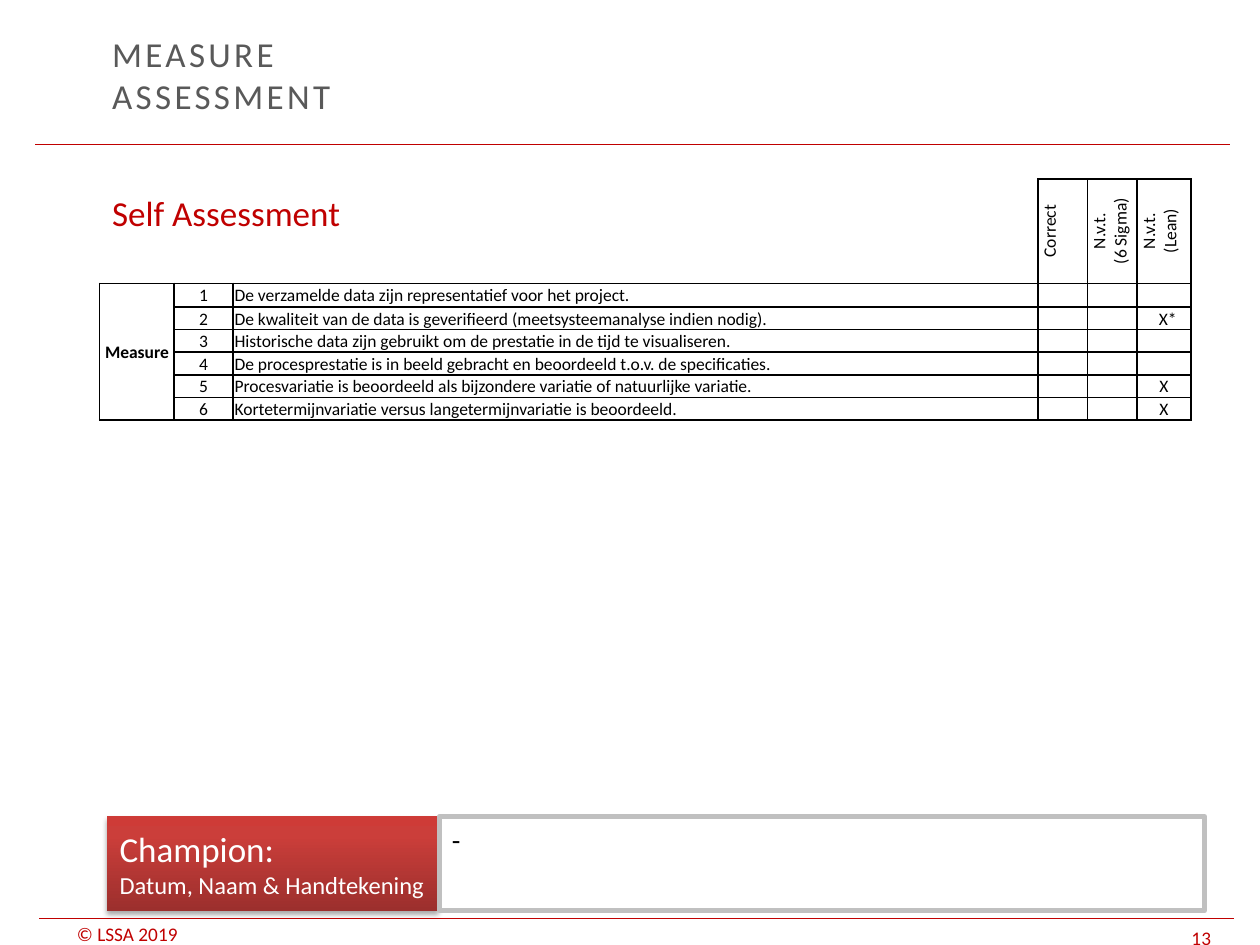
import dataclasses
import typing

import lxml.etree
import pptx
import pptx.dml.color
import pptx.enum.shapes
import pptx.enum.text
import pptx.oxml.ns
import pptx.util

Cm, Pt = pptx.util.Cm, pptx.util.Pt
ANCHOR, ALIGN = pptx.enum.text.MSO_ANCHOR, pptx.enum.text.PP_ALIGN
SIDES = "margin_left", "margin_top", "margin_right", "margin_bottom"
PAD = 0.25, 0.13, 0.25, 0.13
FLAT = 0.25, 0, 0.25, 0
CELL = 0.03, 0.03, 0.03, 0
SHIFT = 0.18, 0.03, 0.03, 0
PLAIN = "{2D5ABB26-0587-4C30-8999-92F81FD0307C}"

HEADS = ["Correct", "N.v.t.\v(6 Sigma)", "N.v.t.\v(Lean)"]
CHECKS = [
    ("De verzamelde data zijn representatief voor het project.", ""),
    ("De kwaliteit van de data is geverifieerd (meetsysteemanalyse indien nodig).", "X*"),
    ("Historische data zijn gebruikt om de prestatie in de tijd te visualiseren.", ""),
    ("De procesprestatie is in beeld gebracht en beoordeeld t.o.v. de specificaties.", ""),
    ("Procesvariatie is beoordeeld als bijzondere variatie of natuurlijke variatie.", "X"),
    ("Kortetermijnvariatie versus langetermijnvariatie is beoordeeld.", "X"),
]
WIDTHS = [1.5, 1.19, 16.22, 1.0, 1.0, 1.09]
HEIGHTS = [2.1, 0.48] + [0.44] * 5


@dataclasses.dataclass
class Theme:
    """Colours and type sizes of the slide."""
    font: str = "Calibri"
    red: str = "C00000"
    grey: str = "595959"
    edge: str = "C0C0C0"
    black: str = "000000"
    white: str = "FFFFFF"
    fade: tuple = ((0, "9C2F2D"), (80, "CB3E3A"), (100, "CE3B37"))
    head: int = 20
    note: int = 16
    sub: int = 14
    foot: int = 11
    cell: int = 10


def rgb(code):
    """Return a colour from its hex code."""
    return pptx.dml.color.RGBColor.from_string(code)


def put(item, form):
    """Set every attribute named in a dict."""
    for name, value in form.items():
        setattr(item, name, value)


def node(root, tag, **attrs):
    """Append an XML element and return it."""
    return lxml.etree.SubElement(root, pptx.oxml.ns.qn(tag), attrs)


def tint(root, code):
    """Append a plain colour and return it."""
    return node(root, "a:srgbClr", val=code)


@dataclasses.dataclass
class Deck:
    """Holds the style and the current slide."""
    theme: Theme
    slide: typing.Any

    def text(self, frame, lines, anchor=ANCHOR.TOP, pad=PAD, align=ALIGN.LEFT, bold=False):
        """Fill a text frame with (text, size, colour) lines."""
        put(frame, {"word_wrap": True, "vertical_anchor": anchor})
        put(frame, {side: Cm(gap) for side, gap in zip(SIDES, pad)})
        for spot, (words, size, color) in enumerate(lines):
            para = frame.add_paragraph() if spot else frame.paragraphs[0]
            put(para, {"text": words, "alignment": align})
            for run in para.runs:
                put(run.font, {"name": self.theme.font, "size": Pt(size), "bold": bold})
                run.font.color.rgb = rgb(color)

    def title(self, words, box):
        """Place and format the title."""
        shape = self.slide.shapes.title
        put(shape, dict(zip(("left", "top", "width", "height"), map(Cm, box))))
        self.text(shape.text_frame, [(words, self.theme.head, self.theme.grey)], ANCHOR.MIDDLE)
        shape.text_frame.auto_size = pptx.enum.text.MSO_AUTO_SIZE.NONE
        for run in shape.text_frame.paragraphs[0].runs:
            run.font._element.set("spc", "190")

    def label(self, words, size, box, **form):
        """Add a red text box."""
        shape = self.slide.shapes.add_textbox(*map(Cm, box))
        self.text(shape.text_frame, [(words, size, self.theme.red)], **form)

    def rule(self, left, top, width):
        """Add a level red line."""
        kind = pptx.enum.shapes.MSO_CONNECTOR.STRAIGHT
        line = self.slide.shapes.add_connector(kind, Cm(left), Cm(top), Cm(left + width), Cm(top))
        line.line.color.rgb = rgb(self.theme.red)
        line.line.width = Pt(0.75)
        node(line._element.spPr, "a:effectLst")

    def panel(self, box, lines, **form):
        """Add a white rectangle with a grey edge."""
        kind = pptx.enum.shapes.MSO_SHAPE.RECTANGLE
        shape = self.slide.shapes.add_shape(kind, *map(Cm, box))
        shape.shadow.inherit = False
        shape.fill.solid()
        shape.fill.fore_color.rgb = rgb(self.theme.white)
        shape.line.color.rgb = rgb(self.theme.edge)
        shape.line.width = Pt(3)
        self.text(shape.text_frame, lines, **form)
        return shape

    def badge(self, box, lines):
        """Add a panel with a red fade and a soft shadow."""
        shape = self.panel(box, lines, anchor=ANCHOR.MIDDLE)
        shape.line.fill.background()
        shape.fill.gradient()
        shape.fill.gradient_angle = 90
        props = shape._element.spPr
        stops = props.find(".//" + pptx.oxml.ns.qn("a:gsLst"))
        for stop in list(stops):
            stops.remove(stop)
        for place, code in self.theme.fade:
            tint(node(stops, "a:gs", pos=str(place * 1000)), code)
        glow = node(props.find(pptx.oxml.ns.qn("a:effectLst")), "a:outerShdw",
                    blurRad=str(Pt(3.1)), dist=str(Pt(1.8)), dir="5400000", rotWithShape="0")
        node(tint(glow, self.theme.black), "a:alpha", val="35000")

    def cell(self, cell, words, edges, pad=CELL, align=ALIGN.CENTER, bold=False, turn=False):
        """Format one table cell and its borders."""
        para = cell.text_frame.paragraphs[0]
        put(para, {"text": words, "alignment": align})
        for run in para.runs:
            put(run.font, {"name": self.theme.font, "size": Pt(self.theme.cell), "bold": bold})
            run.font.color.rgb = rgb(self.theme.black)
        put(cell, {side: Cm(gap) for side, gap in zip(SIDES, pad)})
        cell.vertical_anchor = ANCHOR.MIDDLE
        if not words:
            para._p.get_or_add_endParaRPr().set("sz", str(self.theme.cell * 100))
        props = cell._tc.get_or_add_tcPr()
        if turn:
            props.set("vert", "vert270")
        for side in edges:
            edge = node(props, "a:ln" + side, w=str(Pt(1)))
            tint(node(edge, "a:solidFill"), self.theme.black)
        cell.fill.background()

    def table(self, left, top):
        """Add the checklist."""
        size = len(HEIGHTS), len(WIDTHS)
        box = left, top, sum(WIDTHS), sum(HEIGHTS)
        grid = self.slide.shapes.add_table(*size, *map(Cm, box)).table
        put(grid, {"first_row": False, "horz_banding": False})
        grid._tbl.tblPr.find(pptx.oxml.ns.qn("a:tableStyleId")).text = PLAIN
        for col, width in zip(grid.columns, WIDTHS):
            col.width = Cm(width)
        for row, height in zip(grid.rows, HEIGHTS):
            row.height = Cm(height)
        for col, words in enumerate(["", "", ""] + HEADS):
            edges = "LRTB" if col > 2 else "RB" if col == 2 else "B"
            self.cell(grid.cell(0, col), words, edges, turn=col > 2)
        for row, (check, mark) in enumerate(CHECKS, 1):
            name = "Measure" if row == 1 else ""
            for col, words in enumerate([name, str(row), check, "", "", mark]):
                self.cell(grid.cell(row, col), words, "LRTB", bold=col == 0,
                          pad=SHIFT if words == "X*" else CELL,
                          align=ALIGN.LEFT if col == 2 else ALIGN.CENTER)
        grid.cell(1, 0).merge(grid.cell(len(CHECKS), 0))


def main():
    """Build and save the slide."""
    show = pptx.Presentation()
    put(show, {"slide_width": Cm(25.4), "slide_height": Cm(19.05)})
    theme = Theme()
    deck = Deck(theme, show.slides.add_slide(show.slide_layouts[5]))
    deck.label("© LSSA 2019", theme.foot, (1.3, 18.59, 3.61, 0.46), anchor=ANCHOR.BOTTOM, pad=FLAT)
    deck.label("13", theme.foot, (23.77, 18.57, 1.63, 0.56), anchor=ANCHOR.BOTTOM, pad=FLAT)
    deck.rule(0.71, 2.92, 24.08)
    deck.rule(0.79, 18.52, 24.08)
    deck.title("MEASURE\vASSESSMENT", (2.01, 0.66, 18.01, 1.68))
    deck.label("Self Assessment", theme.head, (2.01, 3.73, 22, 14))
    deck.table(2.01, 3.61)
    deck.badge((2.16, 16.46, 6.68, 1.9), [
        ("Champion:", theme.head, theme.white),
        ("Datum, Naam & Handtekening", theme.sub, theme.white)])
    deck.panel((8.86, 16.46, 15.42, 1.9), [("-", theme.note, theme.black)])
    show.save("out.pptx")


if __name__ == "__main__":
    main()
